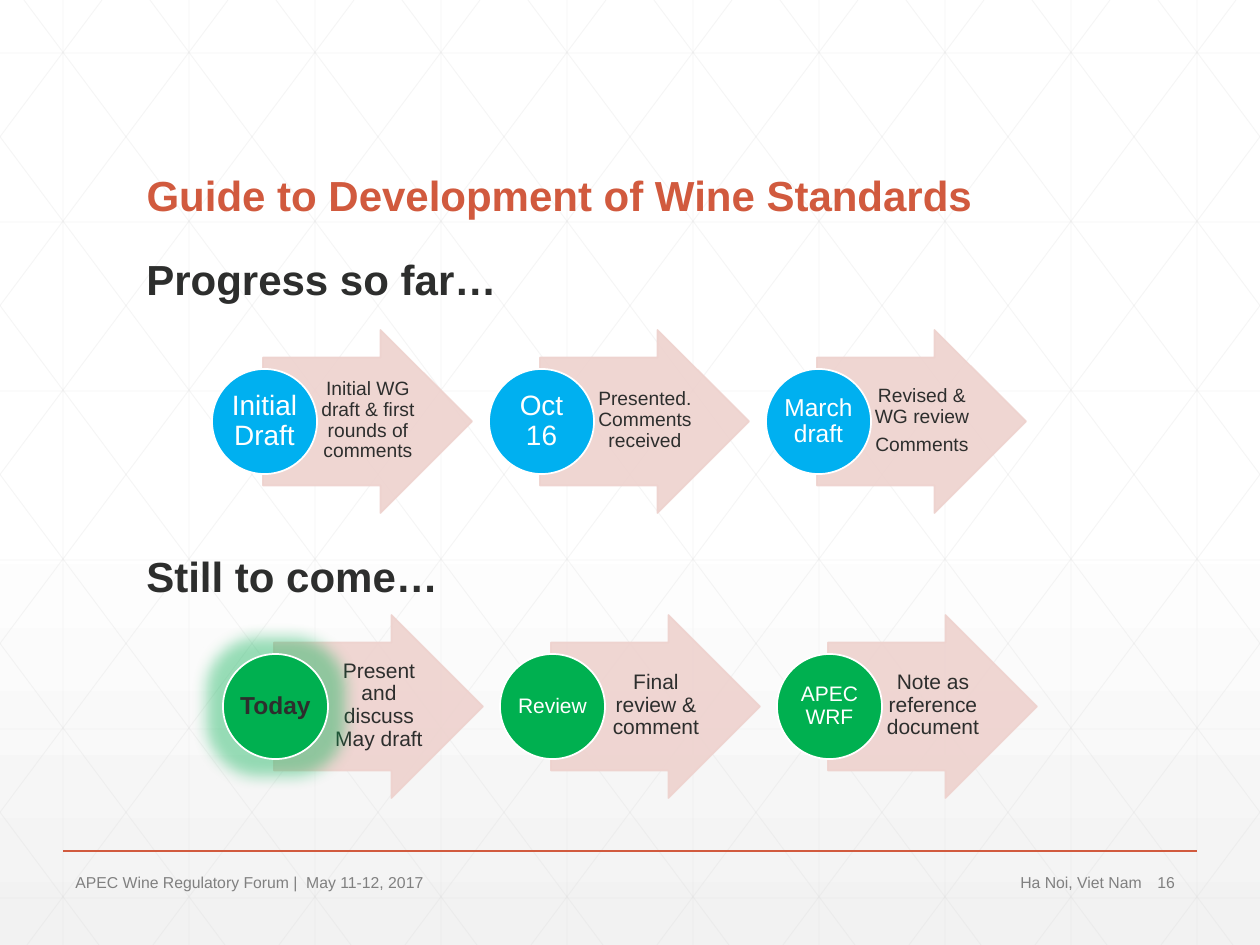
from copy import deepcopy
from dataclasses import dataclass
from lxml import etree
from pptx import Presentation
from pptx import util as u
from pptx.dml.color import RGBColor
from pptx.enum import shapes as sh, text as tx
from pptx.oxml.ns import qn


@dataclass
class Theme:
    font: str = "Arial"
    red: str = "D15A3E"
    ink: str = "2D2E2D"
    gray: str = "808080"
    grid: str = "D9D9D9"
    pink: str = "EED2CE"
    blue: str = "00B0F0"
    green: str = "00B050"
    white: str = "FFFFFF"
    fade: str = "F2F2F2"
    head: int = 24
    foot: int = 9


T = Theme()
W, H = 1260, 945
PX = u.Inches(10) / W
LEFT, MID, RIGHT = tx.PP_ALIGN.LEFT, tx.PP_ALIGN.CENTER, tx.PP_ALIGN.RIGHT


def emu(*px):
    return [round(v * PX) for v in px]


def write(frame, paras, size, color, bold=False, align=LEFT, pad=None):
    """Fill a frame; pad marks a tight, vertically centred label."""
    frame.word_wrap = True
    if pad:
        frame.vertical_anchor = tx.MSO_ANCHOR.MIDDLE
        (frame.margin_left, frame.margin_top,
         frame.margin_right, frame.margin_bottom) = emu(*pad)
    for i, words in enumerate(paras):
        para = frame.add_paragraph() if i else frame.paragraphs[0]
        para.alignment = align
        if pad:
            para.line_spacing = 0.9
            para.space_after = u.Pt(4)
        run = para.add_run()
        run.text = words
        run.font.name, run.font.size, run.font.bold = T.font, u.Pt(size), bold
        run.font.color.rgb = RGBColor.from_string(color)


deck = Presentation()
deck.slide_width, deck.slide_height = emu(W, H)
slide = deck.slides.add_slide(deck.slide_layouts[5])
parts = slide.shapes

# Background: white, fading to gray at the bottom
fill = slide.background.fill
fill.gradient()
fill.gradient_angle = 270
last = fill._fill._gradFill.gsLst[-1]
last.addprevious(deepcopy(last))
for stop, (pos, color) in zip(
        fill.gradient_stops, [(0, T.white), (0.53, T.white), (1, T.fade)]):
    stop.position = pos
    stop.color.rgb = RGBColor.from_string(color)

# Lattice: columns, rows, and diagonals clipped to the slide
lines = [(x, 0, x, H) for x in range(63, W, 126)]
lines += [(0, y, W, y) for y in range(53, H, 169)]
slope = 705 / H
for x in range(24 - 5 * 126, W, 126):
    top, end = max(0, -x / slope), min(H, (W - x) / slope)
    a, b = x + top * slope, x + end * slope
    lines += [(a, top, b, end), (W - a, top, W - b, end)]

# Lattice lines are faint; the footer rule is solid
rule = (63, 851, 1197, 851)
for ends in lines + [rule]:
    wire = parts.add_connector(sh.MSO_CONNECTOR.STRAIGHT, *emu(*ends))
    solid = ends == rule
    wire.line.color.rgb = RGBColor.from_string(T.red if solid else T.grid)
    wire.line.width = u.Pt(1 if solid else 0.5)
    if not solid:
        for tint in wire.element.iter(qn("a:srgbClr")):
            etree.SubElement(tint, qn("a:alpha"), val="25000")
    etree.SubElement(wire.element.spPr, qn("a:effectLst"))

# Title, in front of the lattice
title = parts.title
title.left, title.top, title.width, title.height = emu(134, 69, 993, 158)
title.text_frame.vertical_anchor = tx.MSO_ANCHOR.BOTTOM
title.text_frame.auto_size = tx.MSO_AUTO_SIZE.NONE
write(title.text_frame, ["Guide to Development of Wine Standards"],
      T.head, T.red, True)
title.text_frame.paragraphs[0].line_spacing = 0.9
parts.element.append(title.element)

# Headings and footer
for box, words, size, color, bold, align in [
    ((134, 247, 622, 63), "Progress so far…", T.head, T.ink, True, LEFT),
    ((134, 544, 622, 63), "Still to come…", T.head, T.ink, True, LEFT),
    ((63, 867, 634, 30), "APEC Wine Regulatory Forum |  May 11-12, 2017",
     T.foot, T.gray, False, LEFT),
    ((703, 867, 451, 30), "Ha Noi, Viet Nam", T.foot, T.gray, False, RIGHT),
    ((1145, 867, 52, 30), "16", T.foot, T.gray, False, LEFT),
]:
    note = parts.add_textbox(*emu(*box))
    write(note.text_frame, [words], size, color, bold, align)

# Process rows: left, top, circle colour, body size, steps (label, size, body)
rows = [
    (212, 369, T.blue, 11, [
        ("Initial Draft", 16, ["Initial WG draft & first rounds of comments"]),
        ("Oct 16", 16, ["Presented. Comments received"]),
        ("March draft", 14, ["Revised & WG review", "Comments"])]),
    (223, 654, T.green, 12, [
        ("Today", 14, ["Present and discuss May draft"]),
        ("Review", 12, ["Final review & comment"]),
        ("APEC WRF", 12, ["Note as reference document"])]),
]
for left, top, color, small, steps in rows:
    for i, (label, size, body) in enumerate(steps):
        x = left + 277 * i
        now = label == "Today"

        # Arrow and its text
        arrow = parts.add_shape(sh.MSO_SHAPE.RIGHT_ARROW,
                                *emu(x + 51, top - 39, 209, 183))
        arrow.adjustments[0], arrow.adjustments[1] = 0.7, 0.5
        arrow.shadow.inherit = False
        arrow.fill.solid()
        arrow.fill.fore_color.rgb = RGBColor.from_string(T.pink)
        arrow.line.color.rgb = RGBColor.from_string(T.pink)
        arrow.line.width = u.Pt(1)
        for tint in arrow.element.iter(qn("a:srgbClr")):
            etree.SubElement(tint, qn("a:alpha"), val="90000")
        note = parts.add_textbox(*emu(x + 104, top - 12, 102, 127))
        write(note.text_frame, body, small, T.ink, align=MID, pad=(4, 1, 2, 1))

        # Circle with its label
        disc = parts.add_shape(sh.MSO_SHAPE.OVAL, *emu(x, top, 105, 105))
        disc.shadow.inherit = False
        disc.fill.solid()
        disc.fill.fore_color.rgb = RGBColor.from_string(color)
        disc.line.color.rgb = RGBColor.from_string(T.white)
        disc.line.width = u.Pt(1)
        write(disc.text_frame, [label], size, T.ink if now else T.white,
              now, MID, (1, 1, 1, 1))

        # Glow around the current step
        if now:
            fx = disc.element.spPr.find(qn("a:effectLst"))
            glow = etree.SubElement(fx, qn("a:glow"), rad=str(u.Pt(18)))
            tint = etree.SubElement(glow, qn("a:srgbClr"), val=color)
            etree.SubElement(tint, qn("a:alpha"), val="40000")

deck.save("out.pptx")
